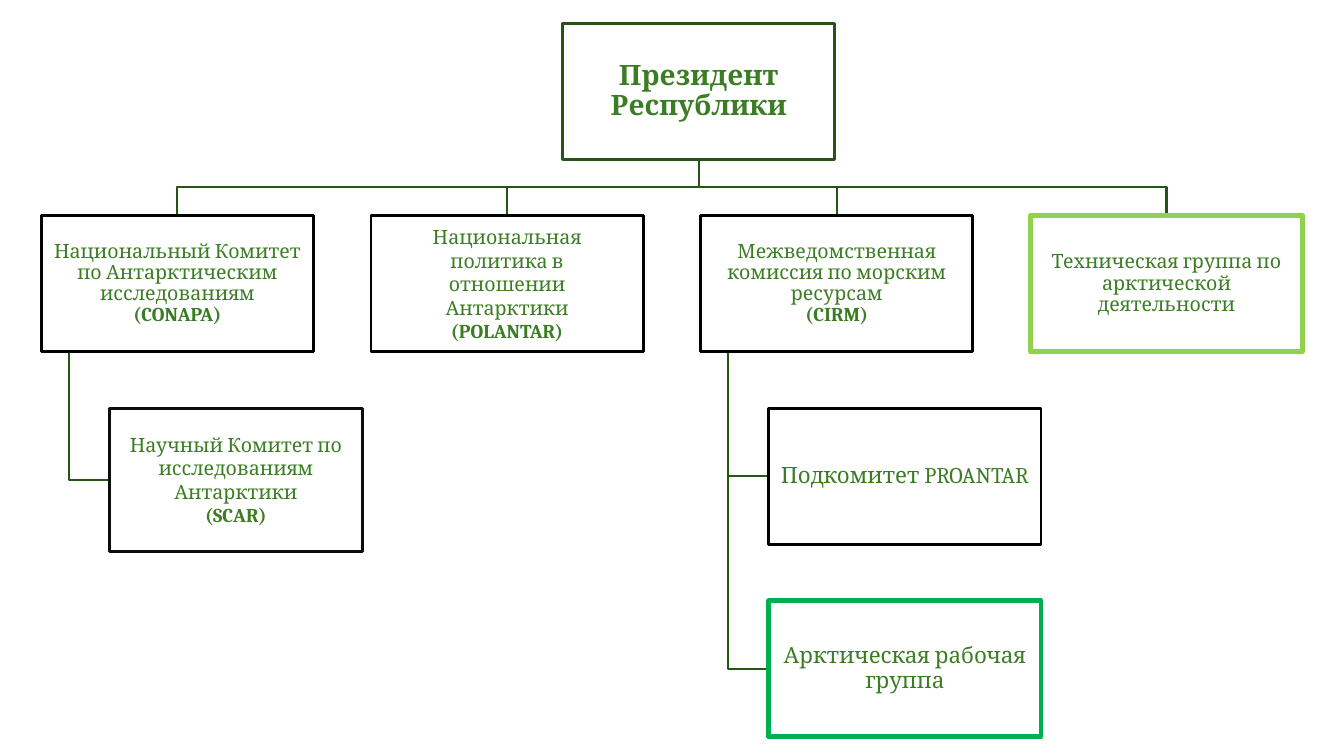
from collections import namedtuple

from pptx import Presentation
from pptx.dml.color import RGBColor
from pptx.enum.shapes import MSO_SHAPE as Shape
from pptx.enum.text import MSO_ANCHOR as Anchor, PP_ALIGN as Align
from pptx.util import Inches, Pt

Box = namedtuple("Box", "left top width height")

LEFT, TOP = 0.41, 0.23
COLUMN, ROW = 3.27, 1.91
WIDTH, HEIGHT = 2.7, 1.35
INDENT, STEM = WIDTH / 4, WIDTH / 10
DARK_GREEN, TEXT_GREEN = "275417", "3B7D23"
BLACK, LIME, EMERALD = "000000", "92D050", "00B050"


def color(value):
    return RGBColor.from_string(value)


def cell(column, row, indent=0):
    return Box(LEFT + column * COLUMN + indent, TOP + row * ROW, WIDTH, HEIGHT)


def add_unit(page, box, name, code="", border=BLACK, weight=2, size=14,
             bold=False, inset=0.01, spacing=0.9):
    """Draw one organisation box, with its bold short name on the last line."""
    unit = page.shapes.add_shape(Shape.RECTANGLE, *map(Inches, box))
    unit.shadow.inherit = False
    unit.fill.solid()
    unit.fill.fore_color.rgb = color("FFFFFF")
    unit.line.color.rgb = color(border)
    unit.line.width = Pt(weight)
    frame = unit.text_frame
    frame.word_wrap = True
    frame.vertical_anchor = Anchor.MIDDLE
    frame.margin_left = frame.margin_right = Inches(inset)
    frame.margin_top = frame.margin_bottom = Inches(0.01)
    para = frame.paragraphs[0]
    para.alignment = Align.CENTER
    para.line_spacing = spacing
    para.font.name = "Cambria"
    para.font.size = Pt(size)
    para.font.bold = bold
    para.font.color.rgb = color(TEXT_GREEN)
    para.add_run().text = name
    if code:
        para.add_line_break()
        span = para.add_run()
        span.text = f"({code})"
        span.font.bold = True


def add_elbow(page, points):
    start, *rest = [(Inches(x), Inches(y)) for x, y in points]
    builder = page.shapes.build_freeform(*start)
    builder.add_line_segments(rest, close=False)
    elbow = builder.convert_to_shape()
    elbow.shadow.inherit = False
    elbow.fill.background()
    elbow.line.color.rgb = color(DARK_GREEN)
    elbow.line.width = Pt(1.5)


def link_below(page, parent, child):
    start, end = (box.left + box.width / 2 for box in (parent, child))
    bottom = parent.top + parent.height
    middle = (bottom + child.top) / 2
    add_elbow(page, [(start, bottom), (start, middle), (end, middle), (end, child.top)])


def link_beside(page, parent, child):
    stem = parent.left + STEM
    level = child.top + child.height / 2
    add_elbow(page, [(stem, parent.top + parent.height), (stem, level), (child.left, level)])


def add_chart_of_bodies(page):
    president = Box(5.58, TOP, WIDTH, HEIGHT)
    bodies = [cell(column, 1) for column in range(4)]
    conapa, polantar, cirm, technical = bodies
    scar = Box(conapa.left + INDENT, cell(0, 2).top, 2.51, 1.42)
    proantar, arctic = (cell(2, row, INDENT) for row in (2, 3))

    for body in bodies:
        link_below(page, president, body)
    for parent, child in ((conapa, scar), (cirm, proantar), (cirm, arctic)):
        link_beside(page, parent, child)

    add_unit(page, president, "Президент Республики", border=DARK_GREEN, size=20, bold=True)
    add_unit(page, conapa, "Национальный Комитет по Антарктическим исследованиям", "CONAPA")
    add_unit(page, polantar, "Национальная политика в отношении Антарктики", "POLANTAR",
             inset=0.33, spacing=1)
    add_unit(page, cirm, "Межведомственная комиссия по морским ресурсам", "CIRM")
    add_unit(page, technical, "Техническая группа по арктической деятельности",
             border=LIME, weight=3.5)
    add_unit(page, scar, "Научный Комитет по исследованиям Антарктики", "SCAR",
             border="0D0D0D", inset=0.12, spacing=1)
    add_unit(page, proantar, "Подкомитет PROANTAR", size=16)
    add_unit(page, arctic, "Арктическая рабочая группа", border=EMERALD, weight=3.5, size=16)


def main():
    deck = Presentation()
    deck.slide_width, deck.slide_height = Inches(13.33), Inches(7.5)
    blank = deck.slide_layouts[6]
    add_chart_of_bodies(deck.slides.add_slide(blank))
    deck.save("out.pptx")


if __name__ == "__main__":
    main()
